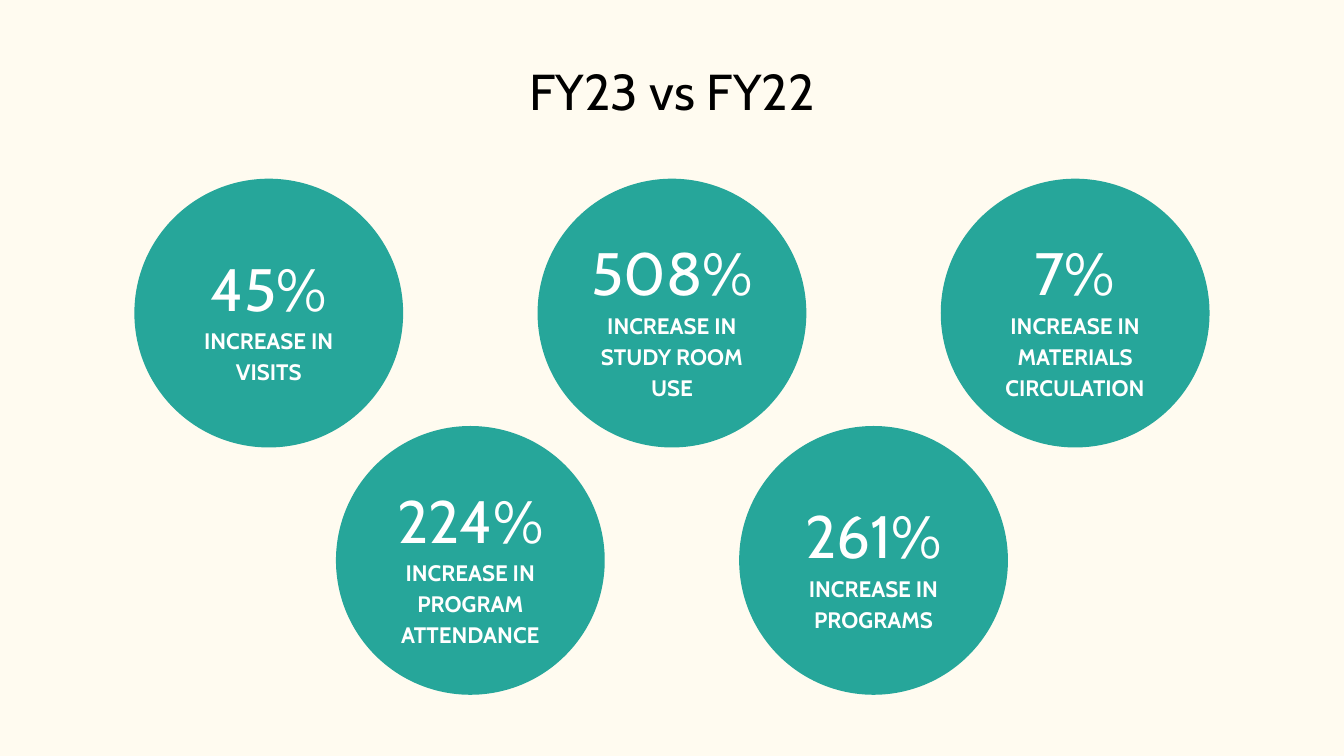
from dataclasses import dataclass

from pptx import Presentation
from pptx.dml.color import RGBColor
from pptx.enum.shapes import MSO_SHAPE
from pptx.enum.text import MSO_ANCHOR, PP_ALIGN
from pptx.slide import Slide
from pptx.text.text import TextFrame
from pptx.util import Inches, Pt


@dataclass(frozen=True)
class Theme:
    font: str = "Cabin"
    background: RGBColor = RGBColor(0xFF, 0xFB, 0xF0)
    circle: RGBColor = RGBColor(0x26, 0xA6, 0x9A)
    on_circle: RGBColor = RGBColor(0xFF, 0xFF, 0xFF)
    heading: RGBColor = RGBColor(0, 0, 0)
    heading_size: int = 27
    figure_size: int = 32
    caption_size: int = 12


@dataclass(frozen=True)
class Grid:
    left: float = 1.0
    top: float = 1.33
    column: float = 1.5
    row: float = 1.84
    diameter: float = 2.0


@dataclass(frozen=True)
class Increase:
    column: int
    row: int
    figure: str
    caption: tuple[str, ...]


THEME = Theme()
GRID = Grid()
SLIDE_WIDTH = 10
SLIDE_HEIGHT = SLIDE_WIDTH * 9 / 16

INCREASES = (
    Increase(0, 0, "45%", ("INCREASE IN VISITS",)),
    Increase(1, 1, "224%", ("INCREASE IN PROGRAM", "ATTENDANCE")),
    Increase(3, 1, "261%", ("INCREASE IN PROGRAMS",)),
    Increase(2, 0, "508%", ("INCREASE IN STUDY ROOM USE",)),
    Increase(4, 0, "7%", ("INCREASE IN MATERIALS CIRCULATION",)),
)


def set_up_frame(frame: TextFrame, anchor: MSO_ANCHOR) -> None:
    frame.word_wrap = True
    frame.vertical_anchor = anchor
    frame.margin_left = frame.margin_right = Inches(0.1)
    frame.margin_top = frame.margin_bottom = Inches(0.1)


def write_line(frame: TextFrame, text: str, *, size: int, color: RGBColor,
               bold: bool = False, spacing: float = 1.0) -> None:
    line = frame.add_paragraph() if frame.text else frame.paragraphs[0]
    line.alignment = PP_ALIGN.CENTER
    line.line_spacing = spacing
    run = line.add_run()
    run.text = text
    run.font.name = THEME.font
    run.font.size = Pt(size)
    run.font.bold = bold
    run.font.color.rgb = color


def draw_heading(slide: Slide, text: str) -> None:
    width = 0.442 * SLIDE_WIDTH
    heading = slide.shapes.add_textbox(
        Inches((SLIDE_WIDTH - width) / 2), Inches(0.35), Inches(width), Inches(0.65))
    set_up_frame(heading.text_frame, MSO_ANCHOR.TOP)
    write_line(heading.text_frame, text, size=THEME.heading_size, color=THEME.heading)


def draw_increase(slide: Slide, increase: Increase) -> None:
    circle = slide.shapes.add_shape(
        MSO_SHAPE.OVAL,
        Inches(GRID.left + increase.column * GRID.column),
        Inches(GRID.top + increase.row * GRID.row),
        Inches(GRID.diameter), Inches(GRID.diameter))
    circle.shadow.inherit = False
    circle.fill.solid()
    circle.fill.fore_color.rgb = THEME.circle
    circle.line.fill.background()
    frame = circle.text_frame
    set_up_frame(frame, MSO_ANCHOR.MIDDLE)
    write_line(frame, increase.figure, size=THEME.figure_size,
               color=THEME.on_circle, spacing=1.15)
    for caption in increase.caption:
        write_line(frame, caption, size=THEME.caption_size,
                   color=THEME.on_circle, bold=True, spacing=1.15)


def main() -> None:
    presentation = Presentation()
    presentation.slide_width = Inches(SLIDE_WIDTH)
    presentation.slide_height = Inches(SLIDE_HEIGHT)
    slide = presentation.slides.add_slide(presentation.slide_layouts[6])
    slide.background.fill.solid()
    slide.background.fill.fore_color.rgb = THEME.background
    for increase in INCREASES:
        draw_increase(slide, increase)
    draw_heading(slide, "FY23 vs FY22")
    presentation.save("out.pptx")


if __name__ == "__main__":
    main()
